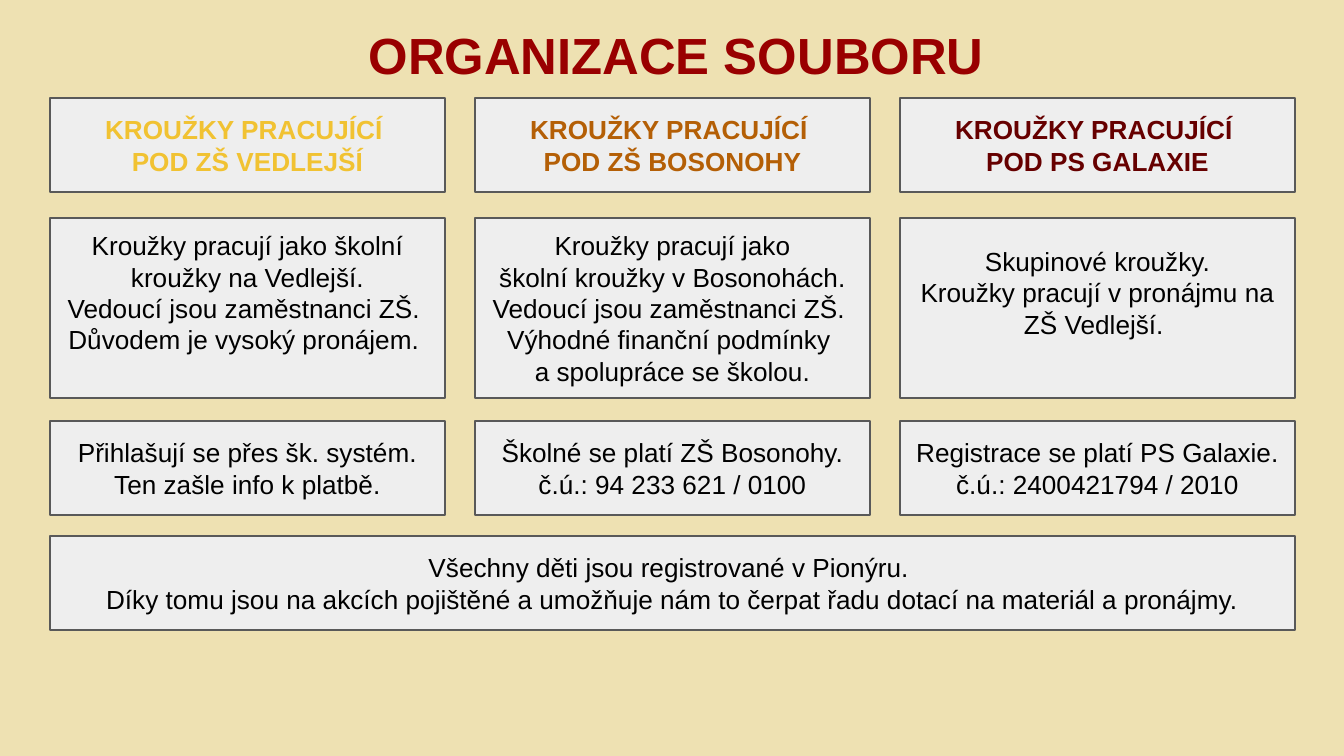
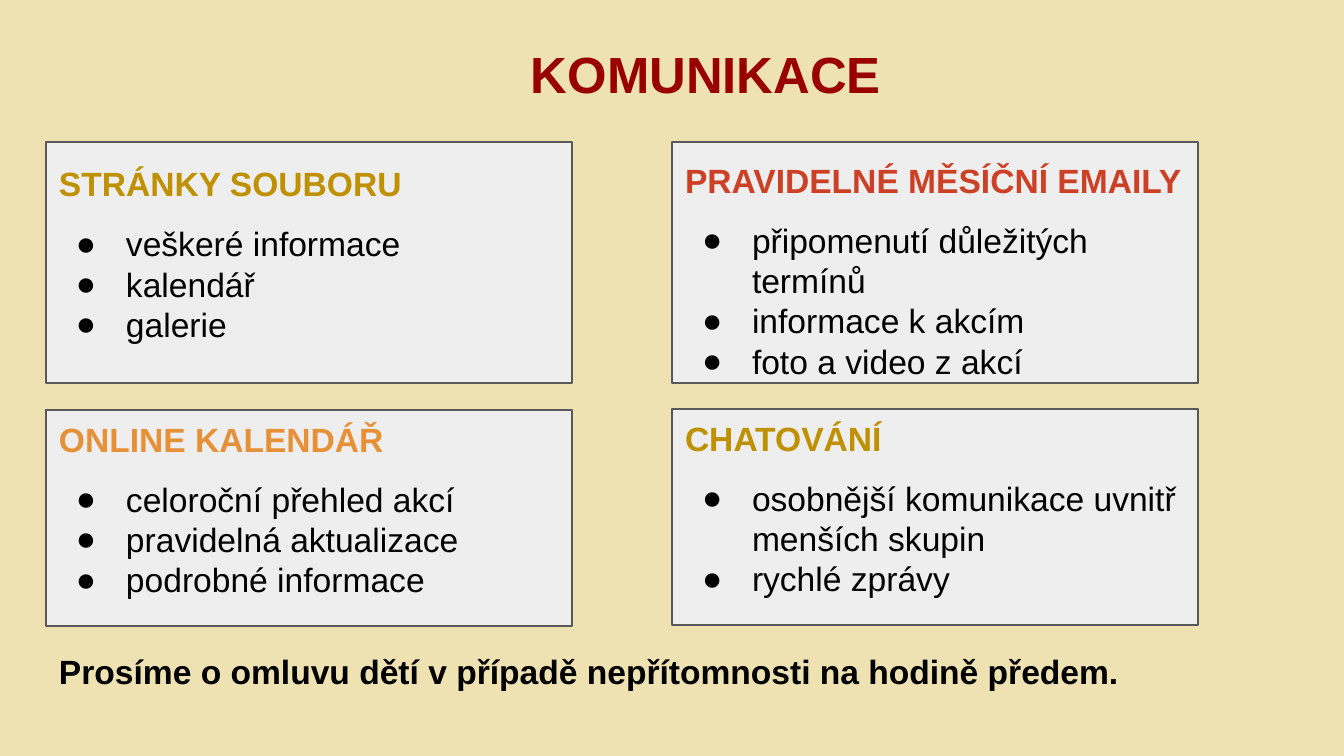
"""Build two slides about how the ensemble is organised and how it communicates."""
from lxml import etree
from pptx import Presentation
from pptx.dml.color import RGBColor
from pptx.enum.shapes import MSO_SHAPE
from pptx.enum.text import MSO_ANCHOR, MSO_AUTO_SIZE, PP_ALIGN
from pptx.oxml.ns import qn
from pptx.util import Pt

RECT = MSO_SHAPE.RECTANGLE
TOP, MIDDLE = MSO_ANCHOR.TOP, MSO_ANCHOR.MIDDLE
CENTER, LEFT = PP_ALIGN.CENTER, PP_ALIGN.LEFT
NO_FIT = MSO_AUTO_SIZE.NONE
PX = 914400 / 134.4
INSET = 13
FONT = "Arial"
COLORS = {
    "background": "EEE1B2", "box": "EEEEEE", "border": "595959",
    "title": "990000", "text": "000000", "yellow": "F1C232",
    "brown": "B45F06", "maroon": "660000", "gold": "BF9000",
    "red": "CC4125", "orange": "E69138",
}
COLORS = {name: RGBColor.from_string(value) for name, value in COLORS.items()}


def add_run(p, text, size, color="text", bold=False):
    r = p.add_run()
    r.text = text
    r.font.name = FONT
    r.font.size = Pt(size)
    r.font.bold = bold
    r.font.color.rgb = COLORS[color]


def place_text(sp, x, y, w, h, anchor, top=INSET, bottom=INSET):
    sp.left, sp.top, sp.width, sp.height = (round(v * PX) for v in (x, y, w, h))
    tf = sp.text_frame
    tf.word_wrap = True
    tf.auto_size = NO_FIT
    tf.vertical_anchor = anchor
    tf.margin_left = tf.margin_right = round(INSET * PX)
    tf.margin_top, tf.margin_bottom = round(top * PX), round(bottom * PX)
    if anchor == MIDDLE:
        sp.shadow.inherit = False
        sp.fill.solid()
        sp.fill.fore_color.rgb = COLORS["box"]
        sp.line.color.rgb = COLORS["border"]
        sp.line.width = Pt(0.75)
    return tf


prs = Presentation()
prs.slide_width, prs.slide_height = round(1344 * PX), round(756 * PX)
fill = prs.slide_master.background.fill
fill.solid()
fill.fore_color.rgb = COLORS["background"]

slides = []
for title, x, y, indent in [("ORGANIZACE SOUBORU", 50, 11, 0), ("KOMUNIKACE", 46, 30, 67)]:
    s = prs.slides.add_slide(prs.slide_layouts[5])
    p = place_text(s.shapes.title, x, y, 1253, 85, TOP).paragraphs[0]
    p.alignment = CENTER
    p._p.get_or_add_pPr().set("marL", str(round(indent * PX)))
    add_run(p, title, 27.2, "title", True)
    slides.append(s)

s = slides[0]
COL_X, COL_PITCH, COL_W, FULL_W = 50, 425, 395, 1245
rows = [
    (98, 94, COL_W, True, [
        ("yellow", INSET, ["KROUŽKY PRACUJÍCÍ ", "POD ZŠ VEDLEJŠÍ"]),
        ("brown", INSET, ["KROUŽKY PRACUJÍCÍ ", "POD ZŠ BOSONOHY"]),
        ("maroon", INSET, ["KROUŽKY PRACUJÍCÍ ", "POD PS GALAXIE"]),
    ]),
    (218, 180, COL_W, False, [
        ("text", 44, ["Kroužky pracují jako školní kroužky na Vedlejší.",
                      "Vedoucí jsou zaměstnanci ZŠ. ",
                      "Důvodem je vysoký pronájem. "]),
        ("text", INSET, ["Kroužky pracují jako", "školní kroužky v Bosonohách.",
                         "Vedoucí jsou zaměstnanci ZŠ. ",
                         "Výhodné finanční podmínky ", "a spolupráce se školou."]),
        ("text", 44, ["Skupinové kroužky.",
                      "Kroužky pracují v pronájmu na ZŠ Vedlejší. "]),
    ]),
    (421, 94, COL_W, False, [
        ("text", INSET, ["Přihlašují se přes šk. systém.", "Ten zašle info k platbě."]),
        ("text", INSET, ["Školné se platí ZŠ Bosonohy.", "č.ú.: 94 233 621 / 0100"]),
        ("text", INSET, ["Registrace se platí PS Galaxie. ", "č.ú.: 2400421794 / 2010"]),
    ]),
    (536, 94, FULL_W, False, [
        ("text", INSET, ["Všechny děti jsou registrované v Pionýru. ",
                         "Díky tomu jsou na akcích pojištěné a umožňuje nám to "
                         "čerpat řadu dotací na materiál a pronájmy."]),
    ]),
]
for y, h, w, bold, cells in rows:
    for col, (color, bottom, lines) in enumerate(cells):
        sp = s.shapes.add_shape(RECT, 0, 0, 0, 0)
        tf = place_text(sp, COL_X + col * COL_PITCH, y, w, h, MIDDLE, bottom=bottom)
        for i, line in enumerate(lines):
            p = tf.add_paragraph() if i else tf.paragraphs[0]
            p.alignment = CENTER
            add_run(p, line, 14, color, bold)

s = slides[1]
cards = [
    (46, 142, 241, INSET, INSET, "gold", "STRÁNKY SOUBORU",
     ["veškeré informace", "kalendář", "galerie"]),
    (672, 142, 241, 33, 0, "red", "PRAVIDELNÉ MĚSÍČNÍ EMAILY",
     ["připomenutí důležitých termínů", "informace k akcím", "foto a video z akcí"]),
    (46, 410, 216, INSET, INSET, "orange", "ONLINE KALENDÁŘ",
     ["celoroční přehled akcí", "pravidelná aktualizace", "podrobné informace"]),
    (672, 409, 216, INSET, INSET, "gold", "CHATOVÁNÍ",
     ["osobnější komunikace uvnitř menších skupin", "rychlé zprávy"]),
]
for x, y, h, top, bottom, color, heading, items in cards:
    sp = s.shapes.add_shape(RECT, 0, 0, 0, 0)
    tf = place_text(sp, x, y, 526, h, MIDDLE, top, bottom)
    p = tf.paragraphs[0]
    p.alignment = LEFT
    p.line_spacing = 0.5
    add_run(p, heading, 18, color, True)
    for i, item in enumerate(items):
        p = tf.add_paragraph()
        p.alignment = LEFT
        p.space_before = Pt(0 if i else 12)
        pPr = p._p.get_or_add_pPr()
        pPr.set("marL", str(round(67 * PX)))
        pPr.set("indent", str(round(-50 * PX)))
        clr = etree.SubElement(pPr, qn("a:buClr"))
        etree.SubElement(clr, qn("a:srgbClr")).set("val", str(COLORS["text"]))
        etree.SubElement(pPr, qn("a:buFont")).set("typeface", FONT)
        etree.SubElement(pPr, qn("a:buChar")).set("char", "●")
        add_run(p, item, 18)

sp = s.shapes.add_textbox(0, 0, 0, 0)
p = place_text(sp, 46, 655, 1152, 47, TOP).paragraphs[0]
p.line_spacing = 0.5
p.space_after = Pt(12)
add_run(p, "Prosíme o omluvu dětí v případě nepřítomnosti na hodině předem.", 18, "text", True)

prs.save("out.pptx")
